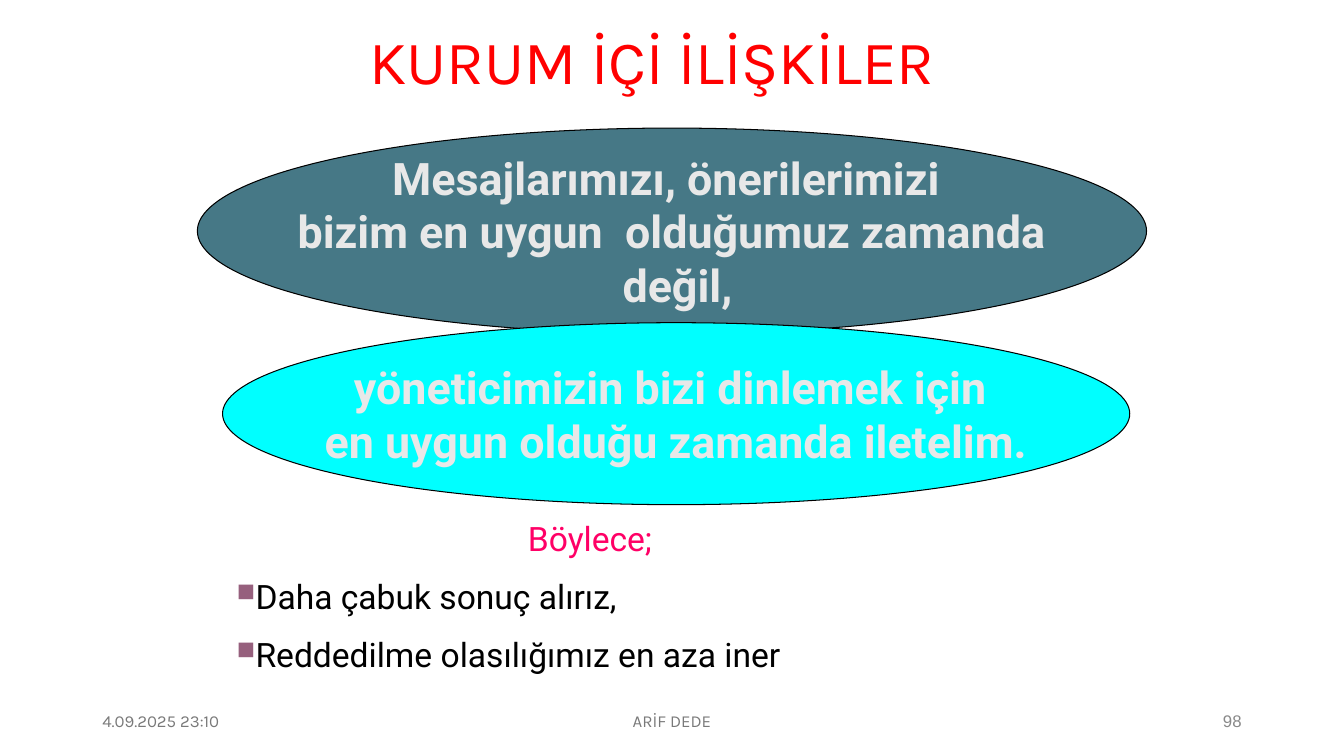
from lxml.etree import SubElement
from pptx import Presentation
from pptx.dml.color import RGBColor
from pptx.enum.shapes import MSO_SHAPE as Shape
from pptx.enum.text import MSO_ANCHOR as Anchor, PP_ALIGN as Align
from pptx.oxml.ns import qn
from pptx.util import Pt

COLORS = {
    "black": "000000",
    "red": "FF0000",
    "pink": "FF0066",
    "teal": "467886",
    "cyan": "00FFFF",
    "light": "E8E8E8",
    "plum": "96607D",
    "footer": "797979",
    "number": "898989",
}


class SlideBuilder:
    """Holds the style and the current slide, and adds elements to it."""

    def __init__(self, slide, colors, font="Roboto"):
        self.slide = slide
        self.colors = colors
        self.font = font

    def color(self, name):
        return RGBColor.from_string(self.colors[name])

    def add_text(self, paragraph, text, size, color, font=None, bold=False):
        run = paragraph.add_run()
        run.text = text
        run.font.size = Pt(size)
        run.font.name = font or self.font
        run.font.bold = bold
        run.font.color.rgb = self.color(color)

    def box(self, left, top, width, height, anchor=Anchor.MIDDLE):
        shape = self.slide.shapes.add_textbox(Pt(left), Pt(top), Pt(width), Pt(height))
        frame = shape.text_frame
        frame.word_wrap = True
        frame.vertical_anchor = anchor
        return frame

    def label(self, bounds, text, size, color, align, font="Karla", line_spacing=1.0):
        paragraph = self.box(*bounds).paragraphs[0]
        paragraph.alignment = align
        paragraph.line_spacing = line_spacing
        self.add_text(paragraph, text, size, color, font)

    def ellipse(self, bounds, fill, lines):
        shape = self.slide.shapes.add_shape(Shape.OVAL, *map(Pt, bounds))
        shape.shadow.inherit = False
        shape.fill.solid()
        shape.fill.fore_color.rgb = self.color(fill)
        shape.line.color.rgb = self.color("black")
        shape.line.width = Pt(0.75)
        frame = shape.text_frame
        frame.word_wrap = False
        frame.vertical_anchor = Anchor.MIDDLE
        for index, line in enumerate(lines):
            paragraph = frame.add_paragraph() if index else frame.paragraphs[0]
            paragraph.alignment = Align.CENTER
            self.add_text(paragraph, line, 32, "light", bold=True)

    def bullet_list(self, bounds, heading, heading_indent, items):
        frame = self.box(*bounds, anchor=Anchor.TOP)
        first = frame.paragraphs[0]
        first._p.get_or_add_pPr().set("marL", str(Pt(heading_indent)))
        self.add_text(first, heading, 24, "pink")
        for item in items:
            paragraph = frame.add_paragraph()
            paragraph.space_before = Pt(12.5)
            self.add_bullet(paragraph)
            self.add_text(paragraph, item, 24, "black")

    def add_bullet(self, paragraph):
        properties = paragraph._p.get_or_add_pPr()
        color = SubElement(properties, qn("a:buClr"))
        SubElement(color, qn("a:srgbClr"), val=self.colors["plum"])
        SubElement(properties, qn("a:buSzPct"), val="75000")
        SubElement(properties, qn("a:buChar"), char="■")


def main():
    presentation = Presentation()
    presentation.slide_width = Pt(960)
    presentation.slide_height = Pt(540)
    slide = presentation.slides.add_slide(presentation.slide_layouts[6])
    builder = SlideBuilder(slide, COLORS)

    footers = [
        (66, 216, "4.09.2025 23:10", "footer", Align.LEFT, "Karla"),
        (318, 324, "ARİF DEDE", "footer", Align.CENTER, "Karla"),
        (678, 216, "98", "number", Align.RIGHT, "Arial"),
    ]
    for left, width, text, color, align, font in footers:
        builder.label((left, 500.5, width, 28.75), text, 12, color, align, font)

    builder.ellipse((141, 91.5, 678, 147), "teal", [
        "Mesajlarımızı, önerilerimizi ",
        "bizim en uygun  olduğumuz zamanda",
        " değil,",
    ])
    builder.ellipse((159, 230.5, 648, 130), "cyan", [
        "yöneticimizin bizi dinlemek için ",
        "en uygun olduğu zamanda iletelim.",
    ])
    builder.bullet_list((162, 366.5, 636, 124), "Böylece;", 208, [
        "Daha çabuk sonuç alırız,",
        "Reddedilme olasılığımız en aza iner",
    ])
    builder.label((127, 11, 678, 70), "KURUM İÇİ İLİŞKİLER", 44, "red",
                  Align.CENTER, line_spacing=0.9)

    presentation.save("out.pptx")


if __name__ == "__main__":
    main()
